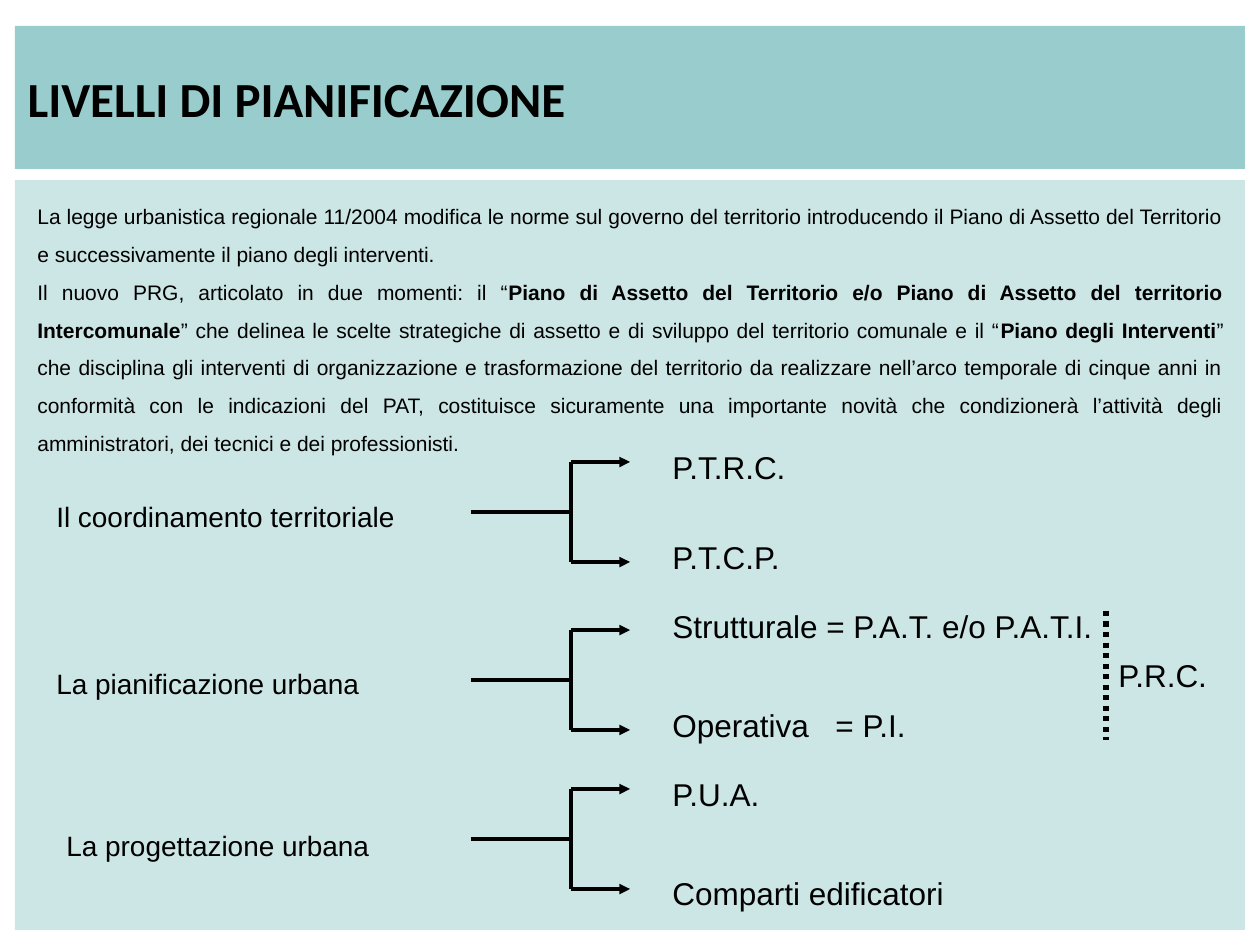
import pptx
import pptx.util
import pptx.dml.color
import pptx.enum.dml
import pptx.enum.shapes
import pptx.enum.text
import pptx.oxml
from dataclasses import dataclass
from lxml import etree

SCALE = 914400 / 126  # EMU per px


def px(length):
    return pptx.util.Emu(round(length * SCALE))


@dataclass(frozen=True)
class Theme:
    ink: str = "000000"
    teal: str = "008080"
    header_alpha: int = 40
    panel_alpha: int = 20
    heading_font: str = "Calibri"
    body_font: str = "Arial"
    heading: int = 28
    intro: int = 12
    level: int = 16
    plan: int = 18
    line: int = 2
    dotted: int = 3


class PlanningSlide:
    def __init__(self, deck, theme):
        self.theme = theme
        self.slide = deck.slides.add_slide(deck.slide_layouts[5])

    def tint(self, shape, alpha):
        shape.fill.solid()
        shape.fill.fore_color.rgb = pptx.dml.color.RGBColor.from_string(self.theme.teal)
        color = shape.fill._xPr.find(".//" + pptx.oxml.ns.qn("a:srgbClr"))
        etree.SubElement(color, pptx.oxml.ns.qn("a:alpha"), val=str(alpha * 1000))

    def style(self, run, size, font, bold=False):
        run.font.size = pptx.util.Pt(size)
        run.font.name = font
        run.font.bold = bold
        run.font.color.rgb = pptx.dml.color.RGBColor.from_string(self.theme.ink)

    def title(self, text, left, top, width, height):
        title = self.slide.shapes.title
        title.left, title.top = px(left), px(top)
        title.width, title.height = px(width), px(height)
        self.tint(title, self.theme.header_alpha)
        frame = title.text_frame
        frame.text = text
        frame.auto_size = pptx.enum.text.MSO_AUTO_SIZE.NONE
        frame.word_wrap = False
        frame.vertical_anchor = pptx.enum.text.MSO_ANCHOR.MIDDLE
        frame.paragraphs[0].alignment = pptx.enum.text.PP_ALIGN.LEFT
        self.style(frame.paragraphs[0].runs[0], self.theme.heading,
                   self.theme.heading_font, True)

    def panel(self, left, top, width, height):
        panel = self.slide.shapes.add_shape(
            pptx.enum.shapes.MSO_SHAPE.RECTANGLE, px(left), px(top), px(width), px(height))
        panel.shadow.inherit = False
        panel.line.fill.background()
        self.tint(panel, self.theme.panel_alpha)

    def text_frame(self, left, top, width, height):
        frame = self.slide.shapes.add_textbox(
            px(left), px(top), px(width), px(height)).text_frame
        frame.word_wrap = True
        return frame

    def label(self, text, left, top, width, height, size, tab=None):
        paragraph = self.text_frame(left, top, width, height).paragraphs[0]
        if tab:
            properties = paragraph._p.get_or_add_pPr()
            stops = etree.SubElement(properties, pptx.oxml.ns.qn("a:tabLst"))
            etree.SubElement(stops, pptx.oxml.ns.qn("a:tab"), pos=str(px(tab)), algn="l")
        paragraph.text = text
        for run in paragraph.runs:
            self.style(run, size, self.theme.body_font)

    def intro(self, paragraphs, left, top, width, height):
        """Each paragraph is a list of pieces, plain and bold in turn."""
        frame = self.text_frame(left, top, width, height)
        for index, pieces in enumerate(paragraphs):
            paragraph = frame.add_paragraph() if index else frame.paragraphs[0]
            paragraph.alignment = pptx.enum.text.PP_ALIGN.JUSTIFY
            paragraph.line_spacing = 1.5
            for position, piece in enumerate(pieces):
                run = paragraph.add_run()
                run.text = piece
                self.style(run, self.theme.intro, self.theme.body_font, position % 2 == 1)

    def line(self, x1, y1, x2, y2, arrow=False, dotted=False):
        line = self.slide.shapes.add_connector(
            pptx.enum.shapes.MSO_CONNECTOR.STRAIGHT, px(x1), px(y1), px(x2), px(y2))
        line.line.color.rgb = pptx.dml.color.RGBColor.from_string(self.theme.ink)
        line.line.width = pptx.util.Pt(self.theme.dotted if dotted else self.theme.line)
        if dotted:
            line.line.dash_style = pptx.enum.dml.MSO_LINE.ROUND_DOT
        if arrow:
            etree.SubElement(line.line._get_or_add_ln(),
                             pptx.oxml.ns.qn("a:tailEnd"), type="triangle")
        etree.SubElement(line._element.spPr, pptx.oxml.ns.qn("a:effectLst"))

    def fork(self, middle, stem=471, spine=571, tip=630, arm=50):
        self.line(stem, middle, spine, middle)
        for end in (middle - arm, middle + arm):
            self.line(spine, middle, spine, end)
            self.line(spine, end, tip, end, arrow=True)


INTRO = [
    ["La legge urbanistica regionale 11/2004 modifica le norme sul governo del territorio "
     "introducendo il Piano di Assetto del Territorio e successivamente il piano degli "
     "interventi."],
    ["Il nuovo PRG, articolato in due momenti: il “",
     "Piano di Assetto del Territorio e/o Piano di Assetto del territorio Intercomunale",
     "” che delinea le scelte strategiche di assetto e di sviluppo del territorio comunale "
     "e il “",
     "Piano degli Interventi",
     "” che disciplina gli interventi di organizzazione e trasformazione del territorio da "
     "realizzare nell’arco temporale di cinque anni in conformità con le indicazioni del PAT, "
     "costituisce sicuramente una importante novità che condizionerà l’attività degli "
     "amministratori, dei tecnici e dei professionisti."],
]

# Level, its left and top, fork middle, then each plan with its top
LEVELS = [
    ("Il coordinamento territoriale", 44, 493, 512, [("P.T.R.C.", 442), ("P.T.C.P.", 532)]),
    ("La pianificazione urbana", 44, 660, 680,
     [("Strutturale = P.A.T. e/o P.A.T.I.", 601), ("Operativa\t= P.I.", 700)]),
    ("La progettazione urbana", 54, 822, 839, [("P.U.A.", 769), ("Comparti edificatori", 868)]),
]


def main():
    deck = pptx.Presentation()
    deck.slide_width, deck.slide_height = px(1260), px(945)
    theme = Theme()
    page = PlanningSlide(deck, theme)

    # Header, panel and introduction
    page.title("LIVELLI DI PIANIFICAZIONE", 15, 26, 1230, 143)
    page.panel(15, 180, 1230, 750)
    page.intro(INTRO, 25, 185, 1211, 280)

    # Levels forking into their plans
    for level, left, top, middle, plans in LEVELS:
        page.label(level, left, top, 476, 47, theme.level)
        page.fork(middle)
        for plan, plan_top in plans:
            page.label(plan, 660, plan_top, 446, 50, theme.plan,
                       tab=163 if "\t" in plan else None)

    # Urban planning plans joined in the P.R.C.
    page.line(1106, 611, 1106, 740, dotted=True)
    page.label("P.R.C.", 1106, 650, 154, 50, theme.plan)

    deck.save("out.pptx")


if __name__ == "__main__":
    main()
